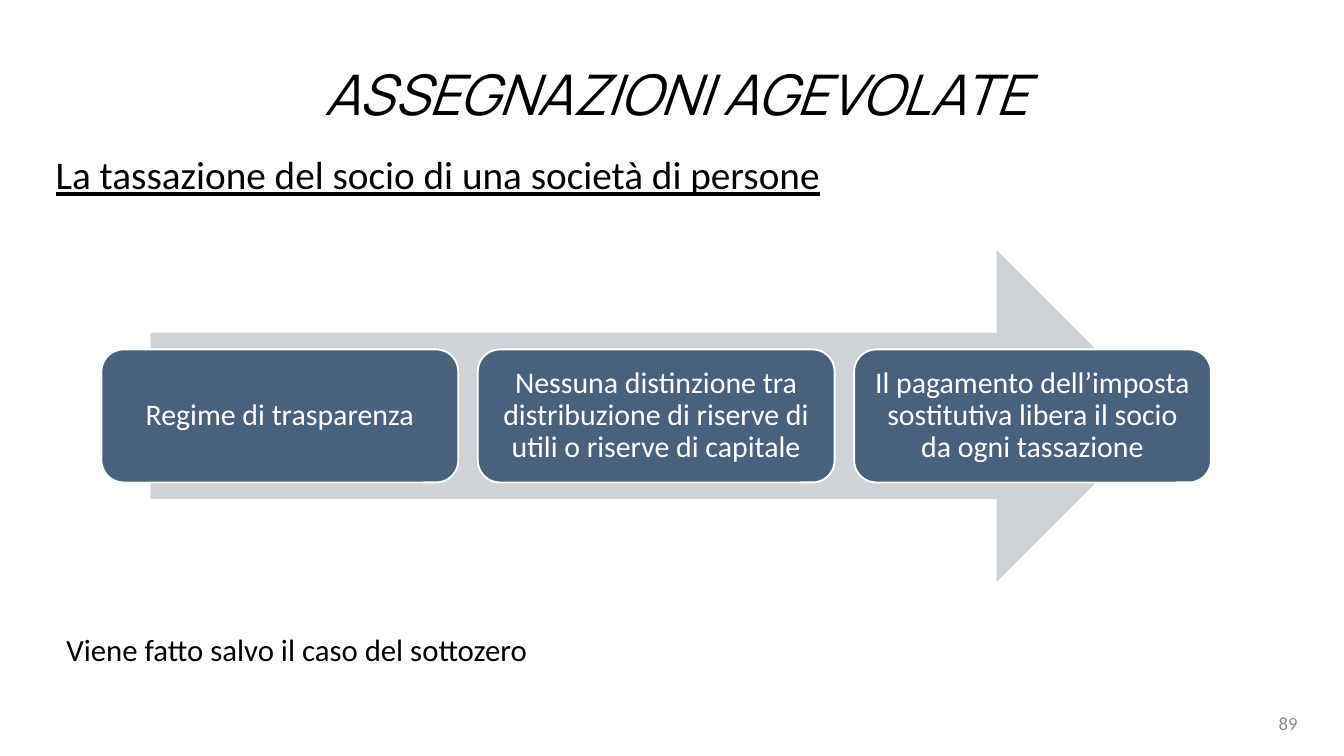
from pptx import Presentation
from pptx.dml.color import RGBColor
from pptx.enum.shapes import MSO_SHAPE
from pptx.enum.text import MSO_ANCHOR, MSO_AUTO_SIZE, PP_ALIGN
from pptx.util import Inches, Pt

BLACK = RGBColor(0x00, 0x00, 0x00)
WHITE = RGBColor(0xFF, 0xFF, 0xFF)
GREY = RGBColor(0x8C, 0x8C, 0x8C)
PALE_GREY = RGBColor(0xCF, 0xD2, 0xD7)
SLATE = RGBColor(0x48, 0x61, 0x7D)

STEPS = [
    "Regime di trasparenza",
    "Nessuna distinzione tra distribuzione di riserve di utili o riserve di capitale",
    "Il pagamento dell’imposta sostitutiva libera il socio da ogni tassazione",
]
STEP_LEFT, STEP_TOP, STEP_WIDTH, STEP_HEIGHT = 7.55, 46.22, 26.55, 17.6
STEP_PITCH = 28


class SlideBuilder:
    """Places elements by percentages of the slide: left, top, width, height."""

    body_font = "Calibri"
    title_font = "Manrope"

    def __init__(self, presentation):
        self.width = presentation.slide_width
        self.height = presentation.slide_height
        self.slide = presentation.slides.add_slide(presentation.slide_layouts[6])

    def area(self, left, top, width, height):
        return (
            int(self.width * left / 100),
            int(self.height * top / 100),
            int(self.width * width / 100),
            int(self.height * height / 100),
        )

    def set_words(self, frame, words, size, color, align=PP_ALIGN.LEFT, font=None, spacing=1.0):
        """Fills a text frame with one paragraph and returns the font of its run."""
        frame.text = words
        paragraph = frame.paragraphs[0]
        paragraph.alignment = align
        paragraph.line_spacing = spacing
        run_font = paragraph.runs[0].font
        run_font.name = font or self.body_font
        run_font.size = Pt(size)
        run_font.color.rgb = color
        return run_font

    def text(self, area, words, size, color=BLACK, wrap=True, anchor=MSO_ANCHOR.TOP, **style):
        frame = self.slide.shapes.add_textbox(*self.area(*area)).text_frame
        frame.word_wrap = wrap
        frame.auto_size = MSO_AUTO_SIZE.NONE
        frame.vertical_anchor = anchor
        return self.set_words(frame, words, size, color, **style)

    def title(self, area, words):
        font = self.text(area, words, 60, align=PP_ALIGN.CENTER,
                         font=self.title_font, spacing=1.25)
        font.italic = True

    def subtitle(self, area, words):
        self.text(area, words, 42).underline = True

    def shape(self, kind, area, fill):
        shape = self.slide.shapes.add_shape(kind, *self.area(*area))
        shape.shadow.inherit = False
        shape.fill.solid()
        shape.fill.fore_color.rgb = fill
        shape.line.fill.background()
        return shape

    def arrow(self, area):
        self.shape(MSO_SHAPE.RIGHT_ARROW, area, PALE_GREY)

    def step(self, area, words):
        box = self.shape(MSO_SHAPE.ROUNDED_RECTANGLE, area, SLATE)
        box.line.color.rgb = WHITE
        box.line.width = Pt(2)
        frame = box.text_frame
        frame.word_wrap = True
        frame.vertical_anchor = MSO_ANCHOR.MIDDLE
        frame.margin_left = frame.margin_right = Inches(0.13)
        frame.margin_top = frame.margin_bottom = Inches(0.13)
        self.set_words(frame, words, 32, WHITE, align=PP_ALIGN.CENTER, spacing=0.9)


def main():
    presentation = Presentation()
    presentation.slide_width = Inches(20)
    presentation.slide_height = Inches(11.25)

    builder = SlideBuilder(presentation)
    builder.text((72.55, 92.98, 24.5, 5.24), "89", 20, GREY,
                 anchor=MSO_ANCHOR.MIDDLE, align=PP_ALIGN.RIGHT)
    builder.title((7.5, 5.16, 85.6, 11.38), "ASSEGNAZIONI AGEVOLATE")
    builder.subtitle((3.65, 19.47, 64.3, 7.2),
                     "La tassazione del socio di una società di persone")
    builder.arrow((11.2, 33.07, 75.3, 43.91))
    for index, words in enumerate(STEPS):
        left = STEP_LEFT + index * STEP_PITCH
        builder.step((left, STEP_TOP, STEP_WIDTH, STEP_HEIGHT), words)
    builder.text((4.45, 83.02, 35.7, 5.87), "Viene fatto salvo il caso del sottozero",
                 33, wrap=False)

    presentation.save("out.pptx")


if __name__ == "__main__":
    main()
